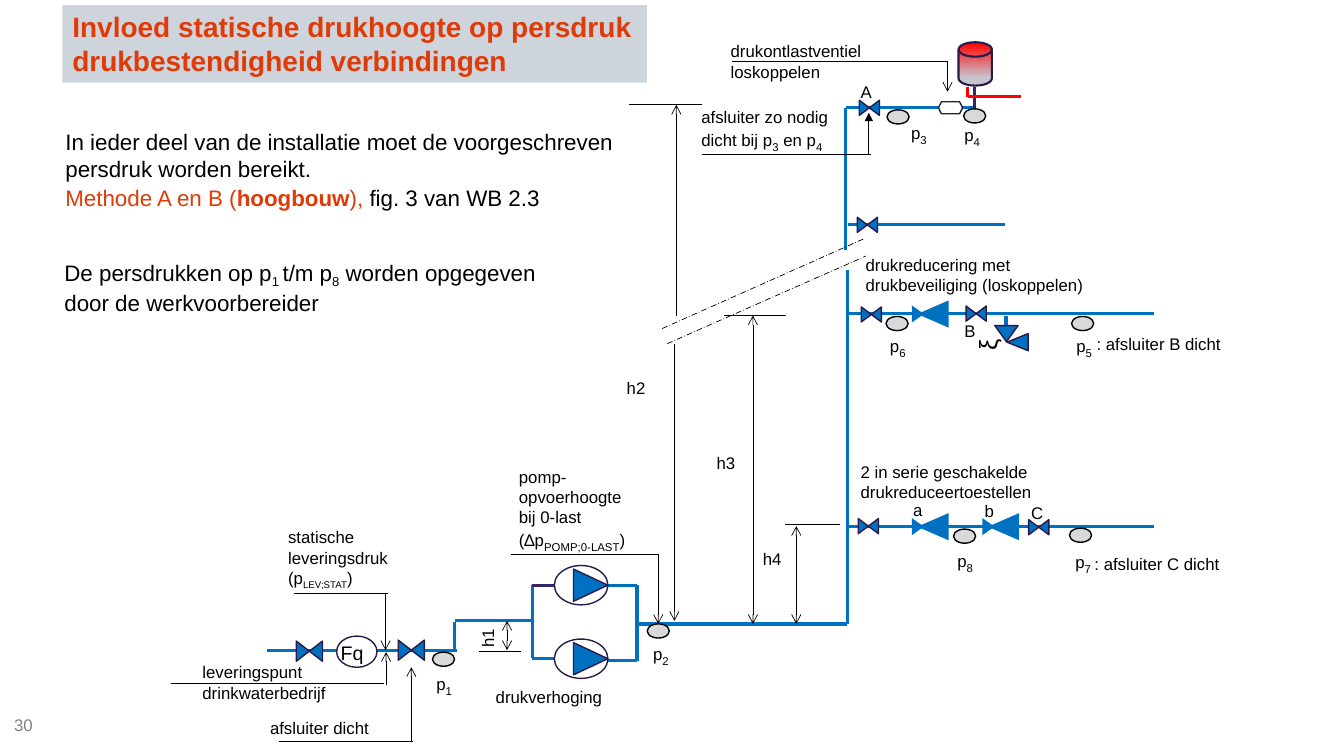
"""Build the slide on static head and discharge pressure in a high-rise water installation."""
from pptx import Presentation
from pptx.dml.color import RGBColor
from pptx.enum.dml import MSO_LINE
from pptx.enum.shapes import MSO_CONNECTOR, MSO_SHAPE
from pptx.enum.text import MSO_ANCHOR, MSO_AUTO_SIZE, PP_ALIGN
from pptx.oxml.ns import qn
from pptx.util import Pt
from lxml.etree import SubElement

BLACK = RGBColor(0x00, 0x00, 0x00)
WHITE = RGBColor(0xFF, 0xFF, 0xFF)
BLUE = RGBColor(0x00, 0x70, 0xC0)
NAVY = RGBColor(0x29, 0x1B, 0x49)
PURPLE = RGBColor(0x37, 0x24, 0x62)
RED = RGBColor(0xFF, 0x00, 0x00)
ORANGE = RGBColor(0xDF, 0x3A, 0x07)
LIGHT_GREY = RGBColor(0xD9, 0xD9, 0xD9)
TANK_GREY = RGBColor(0xC6, 0xC4, 0xCF)
PAGE_GREY = RGBColor(0x80, 0x80, 0x80)
TITLE_GREY = RGBColor(0xCD, 0xD4, 0xDC)

PIPES = [
    (380.2, 417.6, 380.2, 470.2), (324.7, 443.5, 380.2, 443.5),
    (455, 418, 455, 472.3), (434.2, 418, 455, 418),
    (380.2, 470.2, 396, 470.2), (434.2, 472, 455, 472),
    (455, 445.7, 605, 445.7), (324.7, 463.7, 324.7, 444.2),
    (326.2, 464.4, 190.8, 464.4), (605.5, 193, 605.5, 445.7),
    (604.1, 178.6, 604.1, 77), (605.5, 160.6, 717.8, 160.6),
    (604.1, 77, 696.2, 77), (605, 375.8, 824.4, 375.8),
    (605.5, 223.9, 824.4, 223.9), (718.6, 232.6, 718.6, 225.4),
]
DARK_PIPES = [(396, 418.3, 380.2, 418.3), (696.2, 61.9, 696.2, 77)]
RED_PIPES = [(691.2, 69.1, 691.2, 61.9), (729.4, 69.1, 691.2, 69.1)]
LEADERS = [
    (449.3, 74.9, 501.8), (342, 465.1, 372.2), (122.4, 488.2, 274.3),
    (210.2, 424.1, 277.2), (365, 396, 470.2), (560.9, 374.4, 599.8),
    (517, 225.4, 561.6), (522.7, 43.9, 676.8), (501.8, 110.2, 622.1),
    (199.4, 529.9, 295.2),
]
HEIGHTS = [(362.2, 443.5, 464.4), (537.8, 225.4, 445.7), (568.8, 375.8, 445.7)]
ARROWS = [
    (275.8, 489.6, 465.8), (275.4, 424.1, 464.4), (481.7, 245.5, 443.5),
    (470.2, 396, 445.7), (676.8, 43.9, 65.5), (483.1, 225.4, 74.9),
    (293.8, 529.9, 476.6),
]
BREAKS = [(473, 234.7, 617, 170.6), (476.6, 245.5, 618.5, 182.9)]
MAIN_VALVES = [(221, 465.1), (293.8, 464.4)]
BRANCH_VALVES = [(619.6, 160.6), (621, 77), (620.3, 375.8),
                 (622.4, 224.6), (697.3, 224), (742, 376.6)]
REDUCERS = [(666.4, 376.2), (716.8, 376.2), (666.4, 224.3)]
PUMPS = [418, 470.5]
GAUGES = [
    (316.8, 470.9, 304.6, 475.9), (470.2, 450.7, 459.4, 454.3),
    (641.5, 83.5, 643.7, 82.1), (696.2, 82.8, 681.8, 83.5),
    (773.3, 231.1, 761.8, 234), (640.8, 231.1, 628.6, 234),
    (771.8, 382.3, 761, 388.8), (689, 383, 676.8, 388.1),
]
LABELS = [
    (["leveringspunt", "drinkwaterbedrijf"], 137.5, 469.4, 106.6, 36),
    (["drukverhoging"], 347, 486.7, 94.3, 21.6),
    (["drukreducering met", "drukbeveiliging (loskoppelen)"], 611.3, 178.6, 177.1, 36),
    (["afsluiter zo nodig", "dicht bij p~3~ en p~4~"], 493.9, 72.7, 105.8, 36),
    (["2 in serie geschakelde", "drukreduceertoestellen"], 607.7, 326.2, 140.4, 36),
    (["pomp-", "opvoerhoogte", "bij 0-last", "(∆p~POMP;0-LAST~)"], 363.6, 329.8, 105.8, 65.5),
    (["h2"], 440.6, 266.4, 28.1, 21.6),
    (["h3"], 504.7, 319.7, 28.1, 21.6),
    (["h4"], 537.8, 388.1, 28.1, 21.6),
    (["A"], 607.7, 54.7, 22.3, 21.6),
    (["B"], 681.8, 225.4, 22.3, 21.6),
    (["C"], 729.4, 355.7, 23, 21.6),
    (["a"], 645.1, 353.5, 20.9, 21.6),
    (["b"], 696.2, 354.2, 20.9, 21.6),
    (["afsluiter dicht"], 185.8, 509, 89.3, 21.6),
]
WRAPPED_LABELS = [
    (["drukontlastventiel", "loskoppelen"], 514.8, 25.9, 169.2, 36),
    ([": afsluiter B dicht"], 776.2, 234.7, 111.6, 21.6),
    ([": afsluiter C dicht"], 774.7, 391.7, 120.2, 21.6),
]


def add_line(slide, ends, color=BLACK, weight=0.5, head=None, tail=None, dash=None):
    """Draw a straight line with optional arrowheads and dash."""
    line = slide.shapes.add_connector(MSO_CONNECTOR.STRAIGHT, *map(Pt, ends))
    line.line.color.rgb = color
    line.line.width = Pt(weight)
    if dash:
        line.line.dash_style = dash
    outline = line.line._get_or_add_ln()
    for tag, kind in (("a:headEnd", head), ("a:tailEnd", tail)):
        if kind:
            SubElement(outline, qn(tag)).set("type", kind)
    SubElement(line._element.spPr, qn("a:effectLst"))


def add_symbol(slide, kind, x, y, width, height, fill=BLUE, line=NAVY, rotation=0):
    """Draw a preset shape centred on a point."""
    shape = slide.shapes.add_shape(
        kind, Pt(x - width / 2), Pt(y - height / 2), Pt(width), Pt(height))
    shape.shadow.inherit = False
    shape.rotation = rotation
    shape.fill.solid()
    shape.fill.fore_color.rgb = fill
    if line is None:
        shape.line.fill.background()
    else:
        shape.line.color.rgb = line
        shape.line.width = Pt(1)
    return shape


def add_text(slide, paragraphs, left, top, width, height, size=12, subscript=14,
             color=BLACK, bold=False, wrap=False, rotation=0, gap=0):
    """Write paragraphs of strings or (text, color, bold) runs, with ~subscripts~."""
    box = slide.shapes.add_textbox(Pt(left), Pt(top), Pt(width), Pt(height))
    box.rotation = rotation
    frame = box.text_frame
    frame.word_wrap = wrap
    frame.auto_size = MSO_AUTO_SIZE.SHAPE_TO_FIT_TEXT
    for index, content in enumerate(paragraphs):
        paragraph = frame.add_paragraph() if index else frame.paragraphs[0]
        paragraph.alignment = PP_ALIGN.LEFT
        if index and gap:
            paragraph.space_before = Pt(gap)
        runs = [(content, color, bold)] if isinstance(content, str) else content
        for text, run_color, run_bold in runs:
            for part, piece in enumerate(text.split("~")):
                if not piece:
                    continue
                run = paragraph.add_run()
                run.text = piece
                run.font.name = "Arial"
                run.font.size = Pt(subscript if part % 2 else size)
                run.font.bold = run_bold
                run.font.color.rgb = run_color
                if part % 2:
                    run.font._element.set("baseline", "-25000")
    return box


def add_valve(slide, x, y, width, height):
    """Draw a shut-off valve lying along its pipe."""
    add_symbol(slide, MSO_SHAPE.FLOWCHART_COLLATE, x, y, width, height, rotation=270)


def add_reducer(slide, x, y):
    """Draw a pressure reducer as two facing triangles."""
    triangle = MSO_SHAPE.FLOWCHART_EXTRACT
    add_symbol(slide, triangle, x - 10.8, y, 12.2, 8.6, line=None, rotation=90)
    add_symbol(slide, triangle, x, y, 19.4, 22.3, line=None, rotation=270)


def add_pump(slide, x, y):
    """Draw a pump as a triangle in an ellipse."""
    add_symbol(slide, MSO_SHAPE.OVAL, x, y, 38.2, 28.1, fill=WHITE)
    add_symbol(slide, MSO_SHAPE.ISOSCELES_TRIANGLE, x + 6.8, y, 23, 24.5, rotation=90)


def add_tank(slide):
    """Draw the pressure tank with its vertical gradient."""
    tank = add_symbol(slide, MSO_SHAPE.FLOWCHART_MAGNETIC_DISK, 696.6, 45.7, 23.8, 31)
    tank.line.width = Pt(1.5)
    tank.fill.gradient()
    tank.fill.gradient_angle = 270
    for stop, color, position in zip(tank.fill.gradient_stops, (RED, TANK_GREY), (0, 0.81)):
        stop.color.rgb = color
        stop.position = position


def add_lines(slide):
    """Draw the pipes, leader lines, dimensions and break lines."""
    for color, pipes in ((BLUE, PIPES), (PURPLE, DARK_PIPES), (RED, RED_PIPES)):
        for ends in pipes:
            add_line(slide, ends, color, 2.25)
    for left, y, right in LEADERS:
        add_line(slide, (left, y, right, y))
    for x, top, bottom in HEIGHTS:
        add_line(slide, (x, top, x, bottom), head="arrow", tail="arrow")
    for x, start, end in ARROWS:
        add_line(slide, (x, start, x, end), tail="arrow")
    add_line(slide, (620.6, 110.2, 620.6, 80.6), tail="triangle")
    for ends in BREAKS:
        add_line(slide, ends, dash=MSO_LINE.LONG_DASH_DOT)


def add_equipment(slide):
    """Draw valves, reducers, pumps, meter, tank and gauges."""
    for x, y in MAIN_VALVES:
        add_valve(slide, x, y, 14.4, 18.7)
    for x, y in BRANCH_VALVES:
        add_valve(slide, x, y, 10.8, 14.4)
    for x, y in REDUCERS:
        add_reducer(slide, x, y)
    for y in PUMPS:
        add_pump(slide, 415.1, y)
    add_symbol(slide, MSO_SHAPE.FLOWCHART_CONNECTOR, 254.9, 465.5, 28.8, 22.3, fill=WHITE)
    add_symbol(slide, MSO_SHAPE.HEXAGON, 679, 77, 17.3, 8.6, fill=WHITE)
    add_symbol(slide, MSO_SHAPE.FLOWCHART_EXTRACT, 718.9, 238.3, 16.6, 11.5, rotation=180)
    add_symbol(slide, MSO_SHAPE.FLOWCHART_EXTRACT, 726.8, 244.4, 12.2, 15.1, rotation=270)
    add_tank(slide)
    for number, (x, y, left, top) in enumerate(GAUGES, 1):
        add_symbol(slide, MSO_SHAPE.FLOWCHART_CONNECTOR, x, y, 15.8, 10.1, LIGHT_GREY, BLACK)
        add_text(slide, [f"p~{number}~"], left, top, 26.6, 21.6)


def add_texts(slide):
    """Write the title, explanation, labels and page number."""
    for label in LABELS:
        add_text(slide, *label)
    for label in WRAPPED_LABELS:
        add_text(slide, *label, wrap=True)
    add_text(slide, ["statische", "leveringsdruk", "(p~LEV;STAT~)"],
             198.7, 373, 90, 51.1, subscript=12)
    add_text(slide, ["h1"], 334.1, 445, 28.1, 21.6, rotation=270)
    add_text(slide, ["Fq"], 236.2, 454.3, 31, 24.5, size=14)
    add_text(slide, ["ξ"], 694.1, 231.8, 22.3, 28.8, size=18, rotation=270)
    method = [("Methode A en B (", ORANGE, False), ("hoogbouw", ORANGE, True),
              ("), ", ORANGE, False), ("fig. 3 van WB 2.3", BLACK, False)]
    add_text(slide, ["In ieder deel van de installatie moet de voorgeschreven "
                     "persdruk worden bereikt.", method],
             39.6, 87.8, 438.5, 90, size=16, wrap=True, gap=2)
    add_text(slide, ["De persdrukken op p~1 ~t/m p~8~ worden opgegeven "
                     "door de werkvoorbereider"],
             38.9, 181.4, 378, 46.1, size=16, subscript=16, wrap=True)
    title = add_text(slide, ["Invloed statische drukhoogte op persdruk "
                             "drukbestendigheid verbindingen"],
                     44.6, 3.6, 417.6, 55.4, size=20, color=ORANGE, bold=True, wrap=True)
    title.fill.solid()
    title.fill.fore_color.rgb = TITLE_GREY
    page = add_text(slide, ["30"], 10.1, 503.3, 51.1, 28.8, color=PAGE_GREY, wrap=True)
    frame = page.text_frame
    frame.auto_size = MSO_AUTO_SIZE.NONE
    frame.vertical_anchor = MSO_ANCHOR.MIDDLE
    frame.margin_left = frame.margin_right = frame.margin_top = frame.margin_bottom = 0


def main():
    """Assemble and save the slide."""
    presentation = Presentation()
    presentation.slide_width, presentation.slide_height = Pt(960), Pt(540)
    slide = presentation.slides.add_slide(presentation.slide_layouts[6])
    add_lines(slide)
    add_equipment(slide)
    add_texts(slide)
    presentation.save("out.pptx")


if __name__ == "__main__":
    main()
